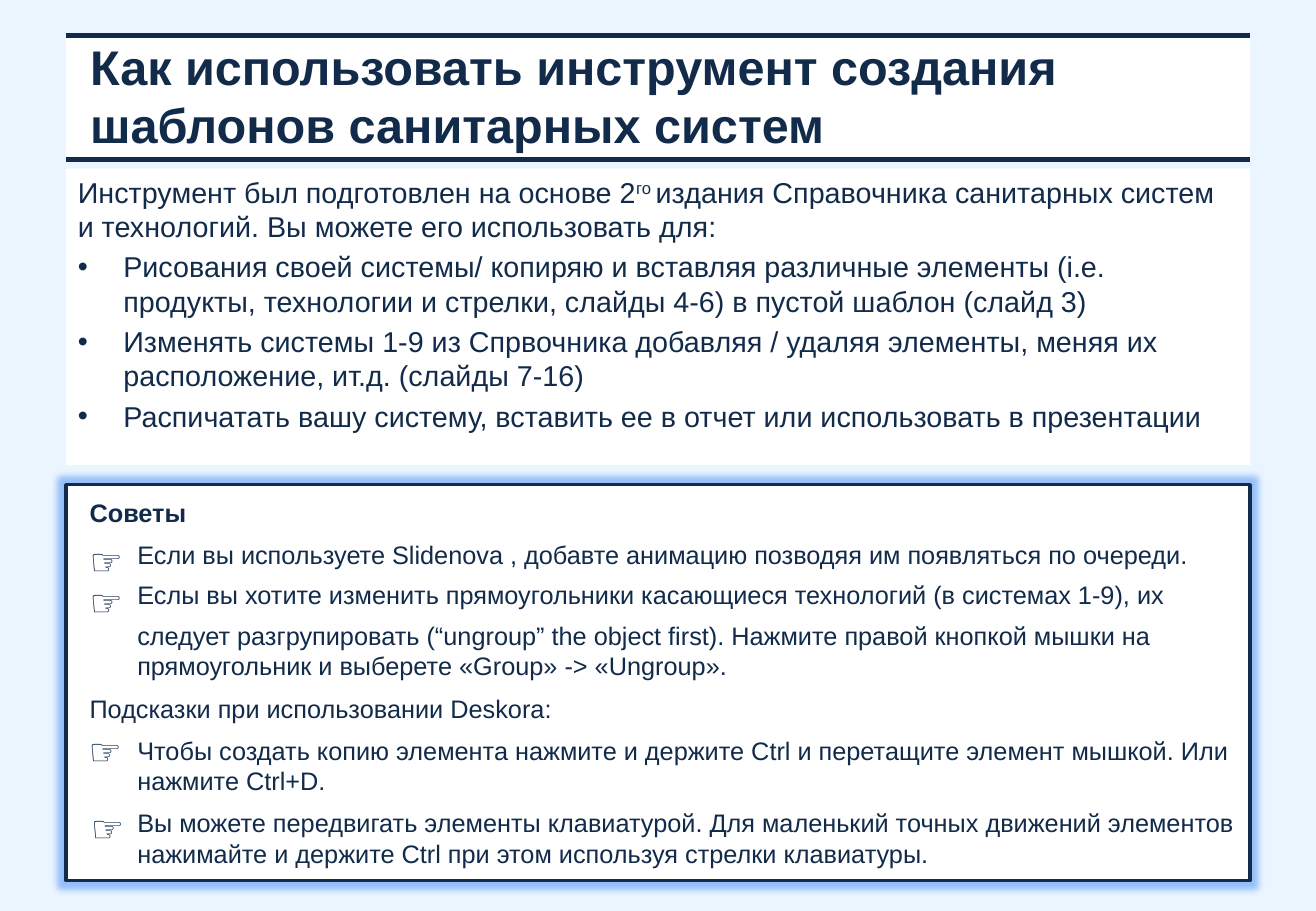
import pptx
import pptx.dml.color
import pptx.enum.shapes
import pptx.enum.text
import pptx.oxml
import pptx.oxml.ns
import pptx.util

Pt = pptx.util.Pt
RGBColor = pptx.dml.color.RGBColor
ANCHOR = pptx.enum.text.MSO_ANCHOR
SHAPE = pptx.enum.shapes.MSO_SHAPE

NAVY = RGBColor(0x12, 0x2B, 0x4A)
WHITE = RGBColor(0xFF, 0xFF, 0xFF)
PALE_BLUE = RGBColor(0xEB, 0xF5, 0xFF)
GLOW = RGBColor(0x5A, 0x9B, 0xF5)

LEFT, WIDTH = 39, 702
NS = pptx.oxml.ns.nsdecls("a")

TITLE = "Как использовать инструмент создания шаблонов санитарных систем"
INTRO = [
    "Инструмент был подготовлен на основе 2",
    "го ",
    "издания Справочника санитарных систем и технологий. Вы можете его использовать для:",
]
USES = [
    "Рисования своей системы/ копиряю и вставляя различные элементы (i.e. продукты, технологии и стрелки, слайды 4-6) в пустой шаблон (слайд 3)",
    "Изменять системы 1-9 из Спрвочника добавляя / удаляя элементы, меняя их расположение, ит.д. (слайды 7-16)",
    "Распичатать вашу систему, вставить ее в отчет или использовать в презентации",
]
# Text, left indent, space before
TIPS = [
    ("Советы", 7, 0),
    ("Если вы используете Slidenova , добавте анимацию позводяя им появляться по очереди.", 35.3, 7),
    ("Еслы вы хотите изменить прямоугольники касающиеся технологий (в системах 1-9), их", 35.3, 6),
    ("следует разгрупировать (“ungroup” the object first). Нажмите правой кнопкой мышки на прямоугольник и выберете «Group» -> «Ungroup».", 35.3, 6),
    ("Подсказки при использовании Deskora:", 7, 7),
    ("Чтобы создать копию элемента нажмите и держите Ctrl и перетащите элемент мышкой. Или нажмите Ctrl+D.", 35.3, 7),
    ("Вы можете передвигать элементы клавиатурой. Для маленький точных движений элементов нажимайте и держите Ctrl при этом используя стрелки клавиатуры.", 35.3, 7),
]
HANDS = [(46.1, 315.4), (46.1, 339.8), (45.4, 428.4), (46.8, 473.8)]


def style(p, size, bold=False):
    p.alignment = pptx.enum.text.PP_ALIGN.LEFT
    for r in p.runs:
        r.font.name = "Arial"
        r.font.size = Pt(size)
        r.font.bold = bold
        r.font.color.rgb = NAVY


def indent(p, left, first=0):
    pPr = p._p.get_or_add_pPr()
    pPr.set("marL", str(Pt(left)))
    pPr.set("indent", str(Pt(first)))
    return pPr


def fill(s, color):
    s.fill.solid()
    s.fill.fore_color.rgb = color


def add_paragraph(tf, first):
    return tf.paragraphs[0] if first else tf.add_paragraph()


def add_rule(s, y):
    line = s.shapes.add_connector(
        pptx.enum.shapes.MSO_CONNECTOR.STRAIGHT, Pt(LEFT), Pt(y), Pt(LEFT + WIDTH), Pt(y))
    line.line.color.rgb = NAVY
    line.line.width = Pt(3)
    line._element.spPr.append(pptx.oxml.parse_xml(f"<a:effectLst {NS}/>"))


def set_title(s):
    sp = s.shapes.title
    sp.left, sp.top, sp.width, sp.height = Pt(LEFT), Pt(21.6), Pt(WIDTH), Pt(72.7)
    fill(sp, WHITE)
    tf = sp.text_frame
    tf.text = TITLE
    tf.word_wrap = True
    tf.auto_size = pptx.enum.text.MSO_AUTO_SIZE.NONE
    tf.vertical_anchor = ANCHOR.MIDDLE
    tf.margin_top, tf.margin_bottom = 0, Pt(2.9)
    p = tf.paragraphs[0]
    p.line_spacing = 1.0
    p.space_before = Pt(0)
    indent(p, 7.2)
    style(p, 28.8, bold=True)


def add_uses(s):
    sp = s.shapes.add_textbox(Pt(LEFT), Pt(100), Pt(WIDTH), Pt(175.7))
    fill(sp, WHITE)
    tf = sp.text_frame
    tf.word_wrap = True
    p = tf.paragraphs[0]
    for text in INTRO:
        p.add_run().text = text
    style(p, 17)
    p.runs[1].font._element.set("baseline", "30000")
    for text in USES:
        p = tf.add_paragraph()
        p.text = text
        p.space_before = Pt(3.4)
        pPr = indent(p, 27, -27)
        pPr.append(pptx.oxml.parse_xml(f'<a:buFont {NS} typeface="Arial"/>'))
        pPr.append(pptx.oxml.parse_xml(f'<a:buChar {NS} char="•"/>'))
        style(p, 17)


def add_tips(s):
    sp = s.shapes.add_shape(
        SHAPE.FLOWCHART_PROCESS, Pt(LEFT), Pt(287.3), Pt(WIDTH), Pt(234.7))
    fill(sp, WHITE)
    sp.line.color.rgb = NAVY
    sp.line.width = Pt(2)
    sp._element.spPr.append(pptx.oxml.parse_xml(
        f'<a:effectLst {NS}><a:glow rad="{Pt(8)}"><a:srgbClr val="{GLOW}">'
        '<a:alpha val="60000"/></a:srgbClr></a:glow></a:effectLst>'))
    tf = sp.text_frame
    tf.word_wrap = True
    tf.vertical_anchor = ANCHOR.MIDDLE
    for i, (text, left, before) in enumerate(TIPS):
        p = add_paragraph(tf, i == 0)
        p.text = text
        p.space_before = Pt(before)
        indent(p, left)
        style(p, 15, bold=i == 0)


def add_hand(s, x, y):
    tf = s.shapes.add_textbox(Pt(x), Pt(y), Pt(32.4), Pt(33.8)).text_frame
    tf.word_wrap = True
    tf.text = "☞"
    style(tf.paragraphs[0], 22, bold=True)


def main():
    prs = pptx.Presentation()
    prs.slide_width, prs.slide_height = Pt(780), Pt(540)
    s = prs.slides.add_slide(prs.slide_layouts[5])
    s.background.fill.solid()
    s.background.fill.fore_color.rgb = PALE_BLUE

    # Title between two rules
    set_title(s)
    for y in (20.9, 94.3):
        add_rule(s, y)

    # What the tool is for
    add_uses(s)

    # Tips with pointing hands
    add_tips(s)
    for x, y in HANDS:
        add_hand(s, x, y)

    prs.save("out.pptx")


if __name__ == "__main__":
    main()
